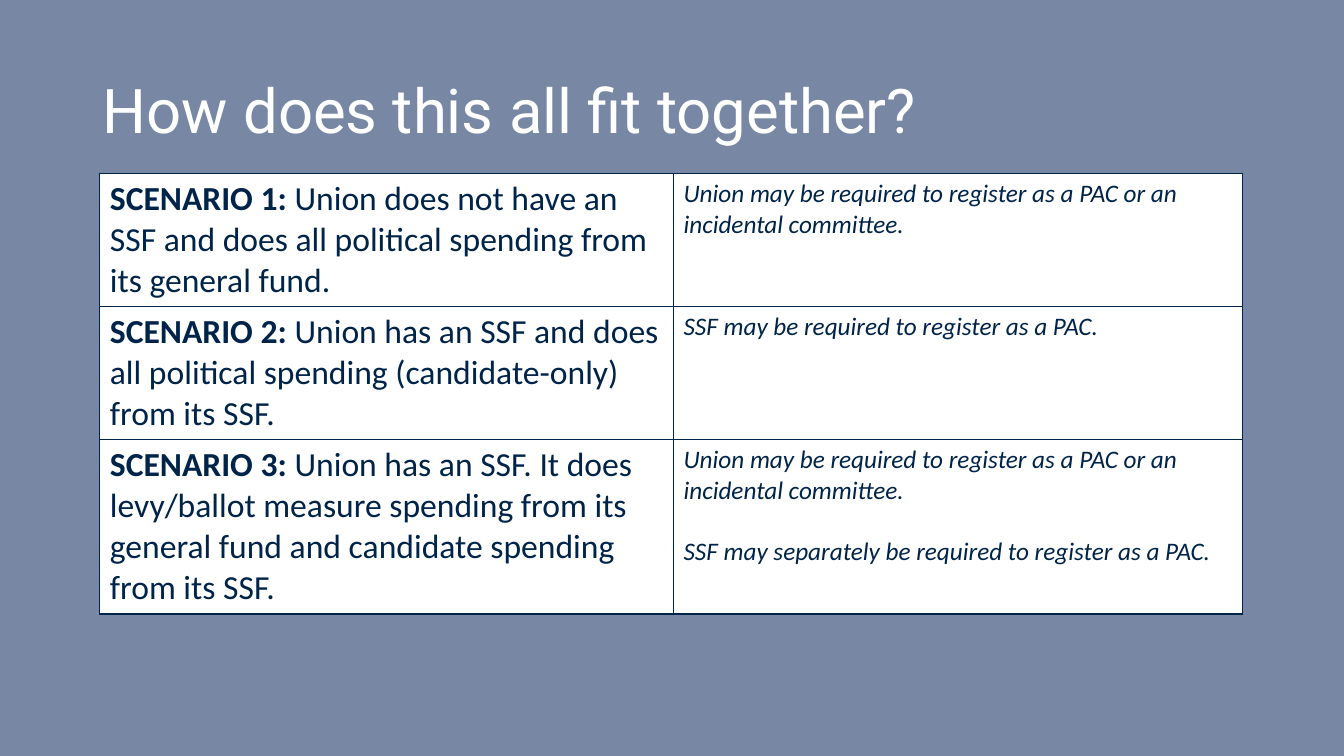
"""Build a slide that sets three union spending scenarios beside their registration duties."""
from lxml.etree import SubElement
from pptx import Presentation
from pptx.dml.color import RGBColor
from pptx.enum.text import MSO_ANCHOR, PP_ALIGN
from pptx.oxml.ns import qn
from pptx.util import Inches, Pt

TITLE = "How does this all fit together?"
SCENARIOS = [
    ("SCENARIO 1: ",
     "Union does not have an SSF and does all political spending from its general fund.",
     ["Union may be required to register as a PAC or an incidental committee."]),
    ("SCENARIO 2: ",
     "Union has an SSF and does all political spending (candidate-only) from its SSF.",
     ["SSF may be required to register as a PAC."]),
    ("SCENARIO 3: ",
     "Union has an SSF. It does levy/ballot measure spending from its general fund "
     "and candidate spending from its SSF.",
     ["Union may be required to register as a PAC or an incidental committee.",
      "SSF may separately be required to register as a PAC."]),
]
COLORS = {"background": "7888A4", "navy": "002449", "white": "FFFFFF"}
SLIDE_SIZE = (13.33, 7.5)
TITLE_BOX = (0.92, 0.4, 11.5, 1.45)
TABLE_ORIGIN = (0.99, 1.72)
COLUMN_WIDTHS = (5.69, 5.64)
ROW_HEIGHTS = (1.32, 1.32, 1.73)


def color(name):
    return RGBColor.from_string(COLORS[name])


def add_text(paragraph, text, size=24, font="Calibri", fill="navy", bold=False, italic=False):
    run = paragraph.add_run()
    run.text = text
    run.font.size = Pt(size)
    run.font.name = font
    run.font.color.rgb = color(fill)
    run.font.bold = bold
    run.font.italic = italic


def format_cell(cell):
    properties = cell._tc.get_or_add_tcPr()
    for side in ("a:lnL", "a:lnR", "a:lnT", "a:lnB"):
        border = SubElement(properties, qn(side), w=str(Pt(1)))
        border_fill = SubElement(border, qn("a:solidFill"))
        SubElement(border_fill, qn("a:srgbClr"), val=COLORS["navy"])
    cell.fill.solid()
    cell.fill.fore_color.rgb = color("white")


def add_title(slide):
    title = slide.shapes.title
    title.left, title.top, title.width, title.height = map(Inches, TITLE_BOX)
    frame = title.text_frame
    frame.word_wrap = True
    frame.vertical_anchor = MSO_ANCHOR.MIDDLE
    paragraph = frame.paragraphs[0]
    paragraph.alignment = PP_ALIGN.LEFT
    paragraph.line_spacing = 0.9
    add_text(paragraph, TITLE, size=44, font="Roboto", fill="white")


def add_scenario_table(slide):
    table = slide.shapes.add_table(
        len(SCENARIOS), len(COLUMN_WIDTHS), *map(Inches, TABLE_ORIGIN),
        Inches(sum(COLUMN_WIDTHS)), Inches(sum(ROW_HEIGHTS))).table
    table.first_row = False
    table.horz_banding = False
    for column, width in zip(table.columns, COLUMN_WIDTHS):
        column.width = Inches(width)
    for row, height, (label, scenario, duties) in zip(table.rows, ROW_HEIGHTS, SCENARIOS):
        row.height = Inches(height)
        scenario_cell, duty_cell = row.cells
        format_cell(scenario_cell)
        format_cell(duty_cell)
        paragraph = scenario_cell.text_frame.paragraphs[0]
        add_text(paragraph, label, bold=True)
        add_text(paragraph, scenario)
        frame = duty_cell.text_frame
        for index, duty in enumerate(duties):
            paragraph = frame.add_paragraph() if index else frame.paragraphs[0]
            if index:
                paragraph.space_before = Pt(22)
            add_text(paragraph, duty, size=18, italic=True)


def main():
    presentation = Presentation()
    presentation.slide_width, presentation.slide_height = map(Inches, SLIDE_SIZE)
    slide = presentation.slides.add_slide(presentation.slide_layouts[5])
    slide.background.fill.solid()
    slide.background.fill.fore_color.rgb = color("background")
    add_title(slide)
    add_scenario_table(slide)
    presentation.save("out.pptx")


if __name__ == "__main__":
    main()
